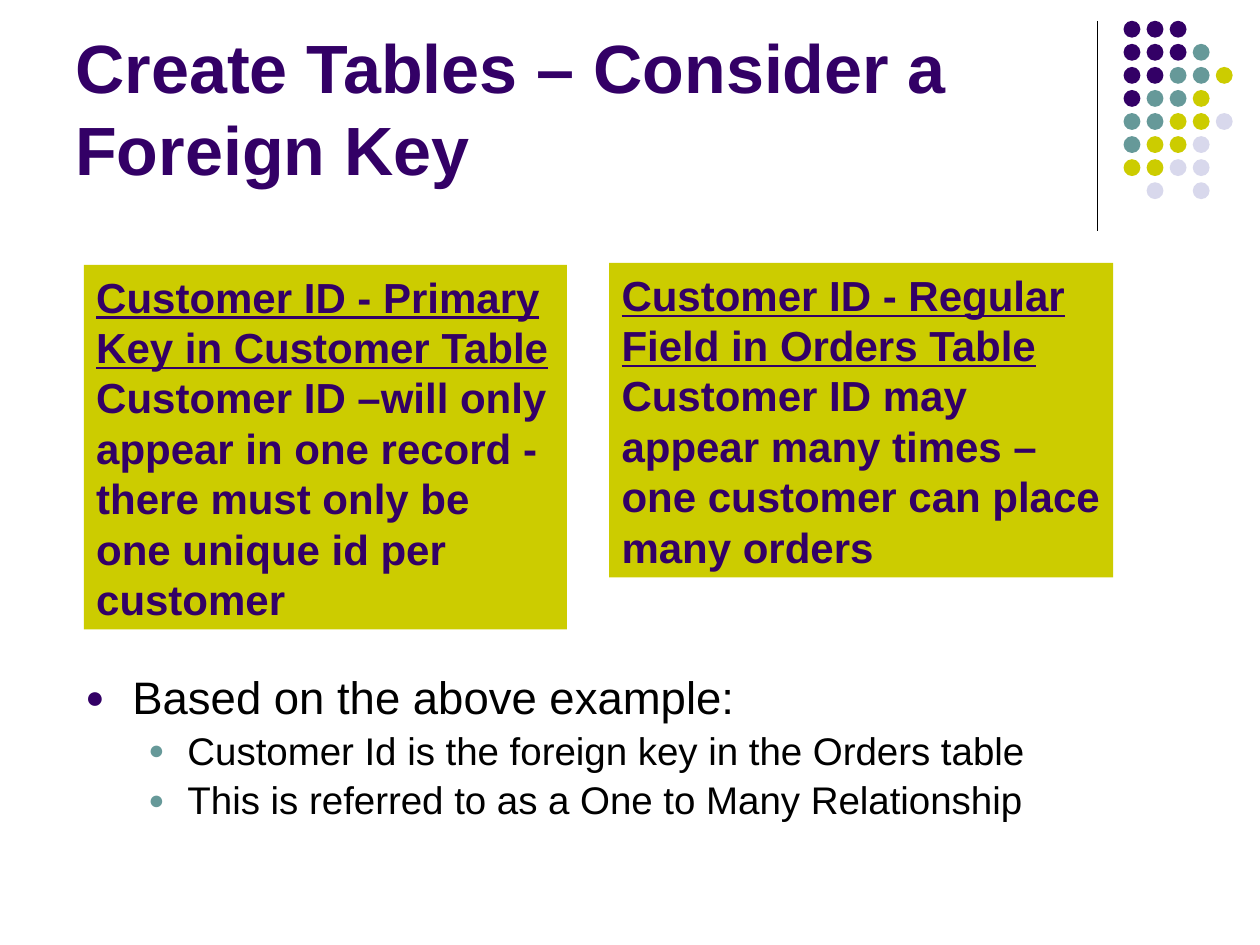
from lxml import etree
from pptx import Presentation
from pptx.dml.color import RGBColor
from pptx.enum.shapes import MSO_CONNECTOR, MSO_SHAPE
from pptx.enum.text import MSO_ANCHOR, MSO_AUTO_SIZE, PP_ALIGN
from pptx.oxml.ns import qn
from pptx.util import Cm, Pt

STRAIGHT = MSO_CONNECTOR.STRAIGHT
OVAL = MSO_SHAPE.OVAL
RECTANGLE = MSO_SHAPE.RECTANGLE
TOP = MSO_ANCHOR.TOP
BOTTOM = MSO_ANCHOR.BOTTOM
GROW = MSO_AUTO_SIZE.SHAPE_TO_FIT_TEXT
LEFT = PP_ALIGN.LEFT

PURPLE = RGBColor(0x33, 0x00, 0x66)
TEAL = RGBColor(0x66, 0x99, 0x99)
LIME = RGBColor(0xCC, 0xCC, 0x00)
LAVENDER = RGBColor(0xD8, 0xD8, 0xEC)
BLACK = RGBColor(0x00, 0x00, 0x00)

DOT_COLORS = {"P": PURPLE, "T": TEAL, "L": LIME, "V": LAVENDER}
DOT_ROWS = ["PPP", "PPPT", "PPTTL", "PTTL", "TTLLV", "TLLV", "LLVV", ".V.V"]

TITLE_FORMAT = {"name": "Arial", "size": Pt(39), "bold": True}
CARD_FORMAT = {"name": "Arial", "size": Pt(24), "bold": True}
LEVELS = [
    {"size": 26, "margin": 0.95, "indent": 0.95, "bullet": PURPLE},
    {"size": 22, "margin": 2.06, "indent": 0.79, "bullet": TEAL},
]

CARDS = [
    ((1.69, 5.34, 9.74, 7.35), "Customer ID - Primary Key in Customer Table",
     "Customer ID –will only appear in one record -  there must only be one unique id per customer"),
    ((12.28, 5.3, 10.16, 6.34), "Customer ID - Regular Field in Orders Table",
     "Customer ID may appear many times – one customer can place many orders"),
]
BULLETS = [
    (0, "Based on the above example:"),
    (1, "Customer Id is the foreign key in the Orders table"),
    (1, "This is referred to as a One to Many Relationship"),
]


def add_run(paragraph, text, color, formats):
    """Add a run with the given colour and font values."""
    run = paragraph.add_run()
    run.text = text
    run.font.color.rgb = color
    for name, value in formats.items():
        setattr(run.font, name, value)


def add_dot_ornament(slide, box):
    """Draw the vertical rule and the dot grid beside it."""
    left, top, width, height = box
    rule = slide.shapes.add_connector(STRAIGHT, Cm(left), Cm(top), Cm(left), Cm(top + height))
    rule.line.color.rgb = BLACK
    rule.line.width = Pt(0.75)
    etree.SubElement(rule._element.spPr, qn("a:effectLst"))
    diameter, offset = 0.34, 0.52
    pitch = (width - offset - diameter) / 4
    for row, keys in enumerate(DOT_ROWS):
        for column, key in enumerate(keys):
            if key not in DOT_COLORS:
                continue
            dot = slide.shapes.add_shape(
                OVAL, Cm(left + offset + column * pitch), Cm(top + row * pitch),
                Cm(diameter), Cm(diameter))
            dot.shadow.inherit = False
            dot.fill.solid()
            dot.fill.fore_color.rgb = DOT_COLORS[key]
            dot.line.fill.background()


def add_title(slide, box, text):
    """Place the slide title against the bottom of its box."""
    frame = slide.shapes.add_textbox(*map(Cm, box)).text_frame
    frame.word_wrap = True
    frame.vertical_anchor = BOTTOM
    add_run(frame.paragraphs[0], text, PURPLE, TITLE_FORMAT)


def add_card(slide, box, heading, body):
    """Place a filled card with an underlined heading and its body."""
    card = slide.shapes.add_shape(RECTANGLE, *map(Cm, box))
    card.shadow.inherit = False
    card.fill.solid()
    card.fill.fore_color.rgb = LIME
    card.line.fill.background()
    frame = card.text_frame
    frame.word_wrap = True
    frame.vertical_anchor = TOP
    frame.auto_size = GROW
    paragraphs = [frame.paragraphs[0], frame.add_paragraph()]
    for paragraph, text, underline in zip(paragraphs, (heading, body), (True, False)):
        paragraph.alignment = LEFT
        add_run(paragraph, text, PURPLE, {**CARD_FORMAT, "underline": underline})


def add_bullet(paragraph, level):
    """Give a paragraph its indents and coloured bullet."""
    properties = paragraph._p.get_or_add_pPr()
    properties.set("marL", str(Cm(level["margin"])))
    properties.set("indent", str(-Cm(level["indent"])))
    color = etree.SubElement(properties, qn("a:buClr"))
    etree.SubElement(color, qn("a:srgbClr"), val=str(level["bullet"]))
    etree.SubElement(properties, qn("a:buSzPct"), val="70000")
    etree.SubElement(properties, qn("a:buFont"), typeface="Arial")
    etree.SubElement(properties, qn("a:buChar"), char="●")


def add_bullet_list(slide, box, items):
    """Place the two-level bullet list."""
    frame = slide.shapes.add_textbox(*map(Cm, box)).text_frame
    frame.word_wrap = True
    for index, (depth, text) in enumerate(items):
        paragraph = frame.add_paragraph() if index else frame.paragraphs[0]
        level = LEVELS[depth]
        paragraph.level = depth
        paragraph.line_spacing = 0.9
        paragraph.space_before = Pt(level["size"] * 0.2)
        add_bullet(paragraph, level)
        add_run(paragraph, text, BLACK, {"name": "Arial", "size": Pt(level["size"])})


def main():
    """Build the slide and save it."""
    presentation = Presentation()
    presentation.slide_width = Cm(25.4)
    presentation.slide_height = Cm(19.05)
    slide = presentation.slides.add_slide(presentation.slide_layouts[6])
    add_dot_ornament(slide, (22.13, 0.42, 2.72, 4.23))
    add_title(slide, (1.27, 0.33, 20.96, 3.61), "Create Tables – Consider a Foreign Key")
    for box, heading, body in CARDS:
        add_card(slide, box, heading, body)
    add_bullet_list(slide, (1.47, 13.49, 20.32, 3.28), BULLETS)
    presentation.save("out.pptx")


if __name__ == "__main__":
    main()
